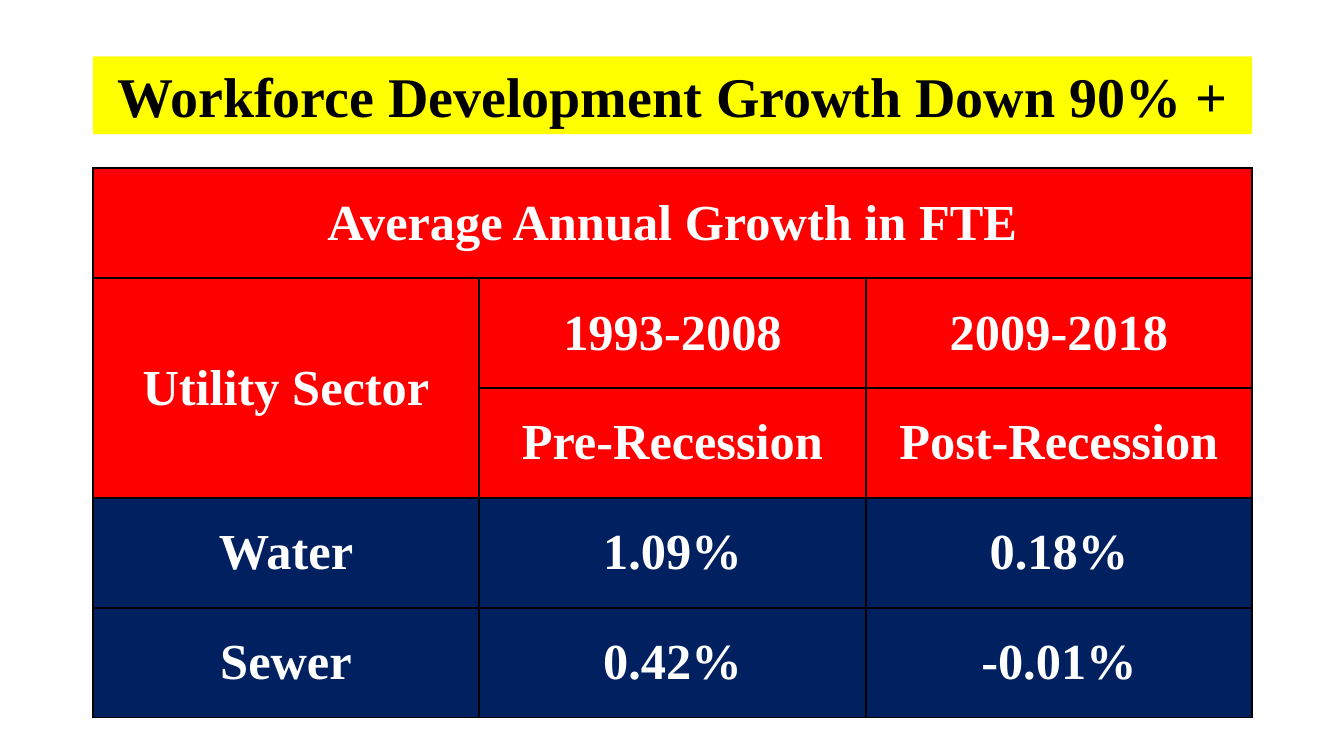
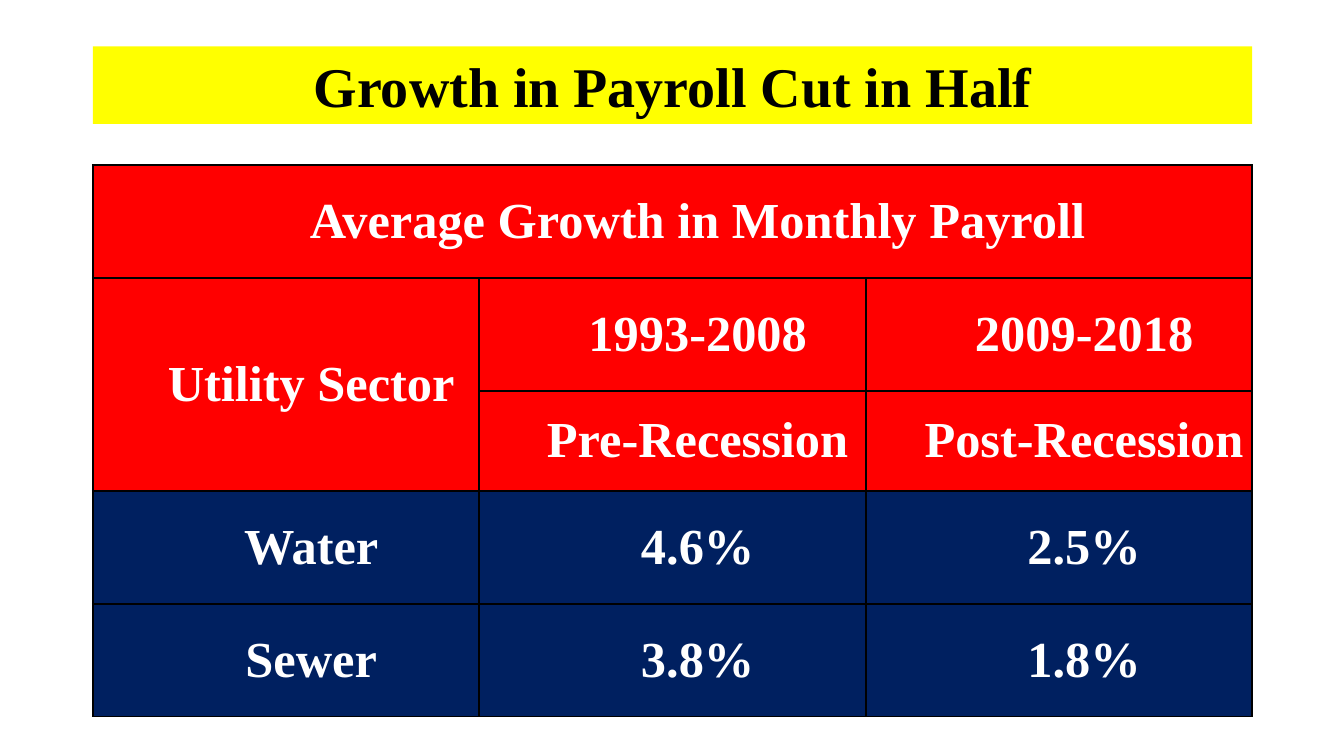
from lxml import etree
from pptx import Presentation
from pptx import util as u
from pptx.dml.color import RGBColor
from pptx.enum import text
from pptx.oxml import ns

BLACK = RGBColor(0x00, 0x00, 0x00)
WHITE = RGBColor(0xFF, 0xFF, 0xFF)
YELLOW = RGBColor(0xFF, 0xFF, 0x00)
RED = RGBColor(0xFF, 0x00, 0x00)
NAVY = RGBColor(0x00, 0x20, 0x60)

FONT = {"name": "Times New Roman", "bold": True}
HEAD = {**FONT, "size": u.Pt(40)}
BODY = {**FONT, "size": u.Pt(36)}
MID = text.MSO_ANCHOR.MIDDLE
FRAME = {"word_wrap": True, "auto_size": text.MSO_AUTO_SIZE.NONE,
         "vertical_anchor": MID}


def px(num):
    return u.Emu(num * 9144)


CELL = {"margin_left": px(7), "margin_right": px(7), "margin_top": 0,
        "margin_bottom": 0, "vertical_anchor": MID}
PLAIN = {"first_row": False, "horz_banding": False}
LEFT, WIDE = 92, 1150
HEADS = 3


def put(item, vals):
    for key, val in vals.items():
        setattr(item, key, val)


class Deck:
    """Hold the shared style and the current slide."""

    def __init__(self):
        self.show = Presentation()
        put(self.show, {"slide_width": px(1333), "slide_height": px(750)})

    def page(self):
        self.slide = self.show.slides.add_slide(self.show.slide_layouts[5])

    def paint(self, item, color):
        item.fill.solid()
        item.fill.fore_color.rgb = color

    def label(self, frame, words, font, color):
        para = frame.paragraphs[0]
        para.alignment = text.PP_ALIGN.CENTER
        run = para.add_run()
        run.text = words
        put(run.font, font)
        run.font.color.rgb = color
        return para

    def title(self, words, top):
        band = self.slide.shapes.title
        put(band, {"left": px(LEFT), "top": px(top),
                   "width": px(WIDE), "height": px(77)})
        self.paint(band, YELLOW)
        put(band.text_frame, FRAME)
        self.label(band.text_frame, words, HEAD, BLACK)

    def edge(self, cell):
        props = cell._tc.get_or_add_tcPr()
        for side in ("lnL", "lnR", "lnT", "lnB"):
            line = etree.SubElement(props, ns.qn("a:" + side),
                                    w=str(u.Pt(1.5)))
            fill = etree.SubElement(line, ns.qn("a:solidFill"))
            etree.SubElement(fill, ns.qn("a:srgbClr"), val=str(BLACK))

    def table(self, rows, top, highs, indent):
        grid = self.slide.shapes.add_table(
            len(rows), len(rows[0]), px(LEFT), px(top),
            px(WIDE), px(sum(highs))).table
        put(grid, PLAIN)
        for row, high in zip(grid.rows, highs):
            row.height = px(high)
        grid.cell(0, 0).merge(grid.cell(0, 2))
        grid.cell(1, 0).merge(grid.cell(2, 0))
        for r, row in enumerate(rows):
            for c, words in enumerate(row):
                cell = grid.cell(r, c)
                put(cell, CELL)
                self.edge(cell)
                self.paint(cell, RED if r < HEADS else NAVY)
                if words:
                    para = self.label(cell.text_frame, words, BODY, WHITE)
                    para._p.get_or_add_pPr().set("indent", str(px(indent)))


def sector(name, water, sewer):
    return [(name, "", ""),
            ("Utility Sector", "1993-2008", "2009-2018"),
            ("", "Pre-Recession", "Post-Recession"),
            ("Water", *water),
            ("Sewer", *sewer)]


def main():
    deck = Deck()
    deck.page()
    deck.title("Workforce Development Growth Down 90% +", 56)
    deck.table(sector("Average Annual Growth in FTE",
                      ("1.09%", "0.18%"), ("0.42%", "-0.01%")),
               167, [109] * 5, 0)
    deck.page()
    deck.title("Growth in Payroll Cut in Half", 46)
    deck.table(sector("Average Growth in Monthly Payroll",
                      ("4.6%", "2.5%"), ("3.8%", "1.8%")),
               164, [112, 112, 99, 112, 112], 50)
    deck.show.save("out.pptx")


if __name__ == "__main__":
    main()
